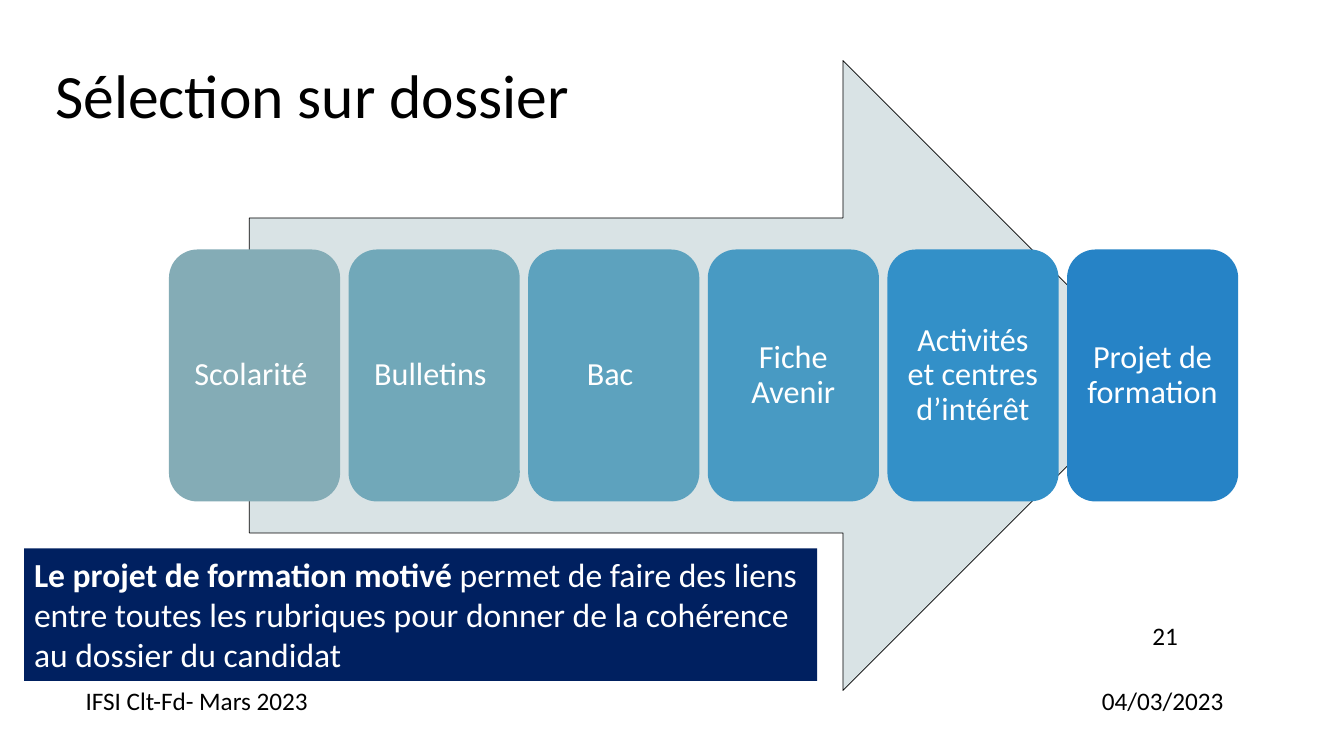
from dataclasses import dataclass

import pptx
import pptx.dml.color
import pptx.enum.shapes
import pptx.enum.text
import pptx.util

Pt = pptx.util.Pt
Shapes = pptx.enum.shapes.MSO_SHAPE
Align = pptx.enum.text.PP_ALIGN
Anchor = pptx.enum.text.MSO_ANCHOR


@dataclass(frozen=True)
class Theme:
    font: str = "Calibri"
    ink: str = "000000"
    light: str = "FFFFFF"
    arrow: str = "D9E3E5"
    callout: str = "002060"
    steps: tuple = ("84ACB6", "71A8B9", "5DA2BE", "489AC3", "3390C8", "2683C6")
    title_size: float = 44
    step_size: float = 23
    callout_size: float = 24
    footer_size: float = 18


THEME = Theme()
CRITERIA = (
    "Scolarité ",
    "Bulletins ",
    "Bac ",
    "Fiche Avenir",
    "Activités et centres d’intérêt",
    "Projet de formation",
)


def rgb(code):
    return pptx.dml.color.RGBColor.from_string(code)


def write(frame, runs, size, color, align=Align.LEFT, anchor=Anchor.TOP, spacing=1.0):
    """Fill a frame with one paragraph of (text, bold) runs."""
    frame.word_wrap = True
    frame.vertical_anchor = anchor
    paragraph = frame.paragraphs[0]
    paragraph.alignment = align
    paragraph.line_spacing = spacing
    for text, bold in runs:
        run = paragraph.add_run()
        run.text = text
        run.font.name = THEME.font
        run.font.size = Pt(size)
        run.font.bold = bold
        run.font.color.rgb = rgb(color)


def add_label(slide, box, text, size, spacing=1.0):
    label = slide.shapes.add_textbox(*map(Pt, box))
    write(label.text_frame, [(text, False)], size, THEME.ink, spacing=spacing)


def add_block(slide, kind, box, fill):
    """Add a flat, filled shape without outline or shadow."""
    block = slide.shapes.add_shape(kind, *map(Pt, box))
    block.shadow.inherit = False
    block.fill.solid()
    block.fill.fore_color.rgb = rgb(fill)
    block.line.fill.background()
    return block


def add_process(slide, box):
    """Draw the big arrow with the row of criteria across its middle."""
    left, top, width, height = box
    inset = 57.4
    arrow_box = (left + inset, top, width - 2 * inset, height)
    arrow = add_block(slide, Shapes.RIGHT_ARROW, arrow_box, THEME.arrow)
    arrow.line.color.rgb = rgb(THEME.ink)
    arrow.line.width = Pt(0.5)

    gap = 6
    step_width = (width - gap * (len(CRITERIA) - 1)) / len(CRITERIA)
    step_height = height * 0.4
    step_top = top + (height - step_height) / 2
    for index, (criterion, fill) in enumerate(zip(CRITERIA, THEME.steps)):
        step_left = left + index * (step_width + gap)
        step = add_block(slide, Shapes.ROUNDED_RECTANGLE,
                         (step_left, step_top, step_width, step_height), fill)
        frame = step.text_frame
        frame.margin_top = frame.margin_bottom = Pt(7.2)
        write(frame, [(criterion, False)], THEME.step_size, THEME.light,
              Align.CENTER, Anchor.MIDDLE, 0.9)


def add_callout(slide, box):
    callout = add_block(slide, Shapes.RECTANGLE, box, THEME.callout)
    runs = [
        ("Le projet de formation motivé ", True),
        ("permet de faire des liens entre toutes les rubriques "
         "pour donner de la cohérence au dossier du candidat", False),
    ]
    write(callout.text_frame, runs, THEME.callout_size, THEME.light)


def add_footer(slide, box):
    left, top, width, height = box
    date_width, number_width, number_rise = 126, 90, 46.8
    right = left + width
    size = THEME.footer_size
    add_label(slide, (left, top, 594, height), "IFSI Clt-Fd- Mars 2023", size)
    add_label(slide, (right - date_width, top, date_width, height), "04/03/2023", size)
    add_label(slide, (right - number_width, top - number_rise, number_width, 52.6),
              "21", size)


def main():
    deck = pptx.Presentation()
    deck.slide_width, deck.slide_height = Pt(960), Pt(540)
    slide = deck.slides.add_slide(deck.slide_layouts[6])
    add_label(slide, (32.4, 43.2, 672, 118.8), "Sélection sur dossier",
              THEME.title_size, 0.9)
    add_process(slide, (120.7, 43.2, 763.8, 450))
    add_callout(slide, (17.2, 391.8, 566.5, 94.5))
    add_footer(slide, (54, 486, 852, 28.8))
    deck.save("out.pptx")


if __name__ == "__main__":
    main()
